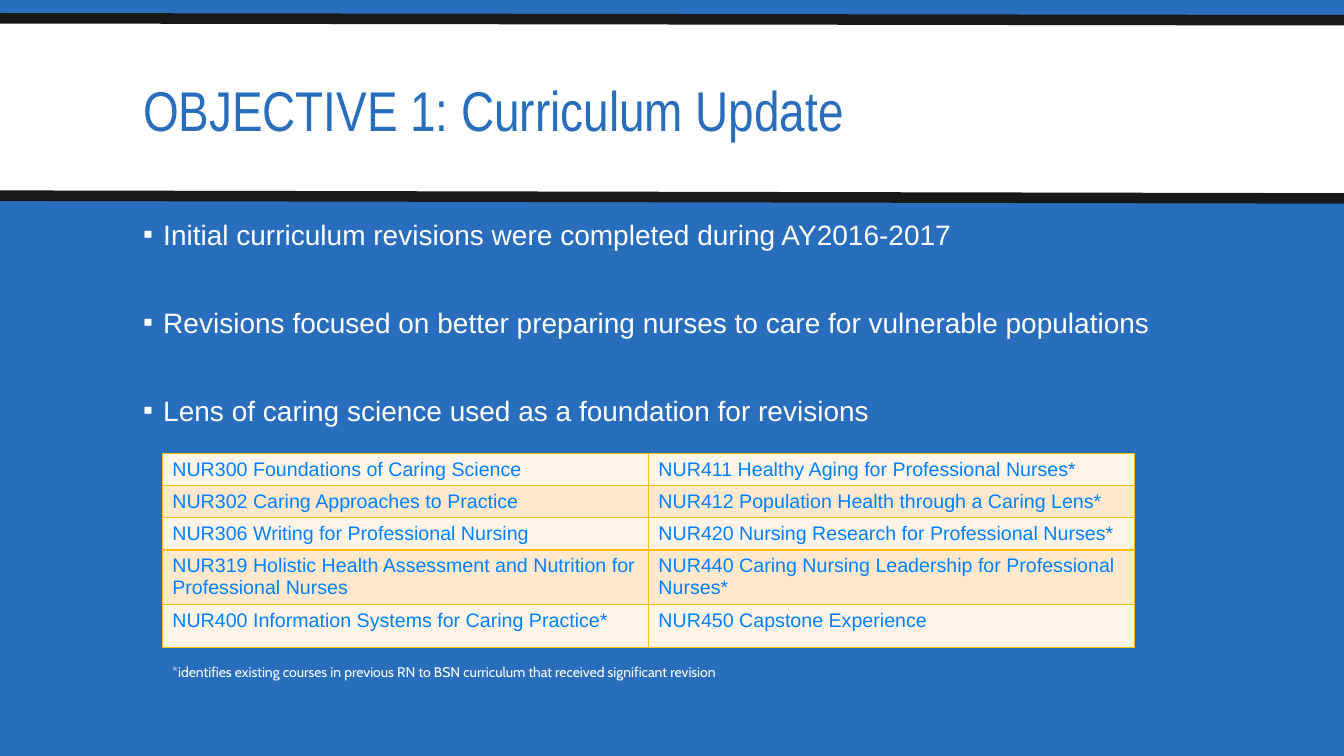
from lxml import etree
from pptx import Presentation
from pptx.dml.color import RGBColor
from pptx.enum.shapes import MSO_CONNECTOR, MSO_SHAPE
from pptx.enum.text import MSO_ANCHOR, MSO_AUTO_SIZE, PP_ALIGN
from pptx.oxml.ns import qn
from pptx.util import Cm, Pt

RECTANGLE = MSO_SHAPE.RECTANGLE
STRAIGHT = MSO_CONNECTOR.STRAIGHT
MIDDLE, TOP = MSO_ANCHOR.MIDDLE, MSO_ANCHOR.TOP
LEFT = PP_ALIGN.LEFT
NO_AUTOFIT, GROW = MSO_AUTO_SIZE.NONE, MSO_AUTO_SIZE.SHAPE_TO_FIT_TEXT

SLIDE_WIDTH, SLIDE_HEIGHT = 33.87, 19.05
BLUE, WHITE, BLACK = "296EBC", "FFFFFF", "181818"
COURSE_BLUE, GOLD = "0080FF", "FFC000"
ROW_FILLS = ("FFF4E7", "FFE8CC")
ROW_HEIGHTS = (0.8, 0.8, 0.8, 1.38, 1.07)

GOALS = (
    "Initial curriculum revisions were completed during AY2016-2017",
    "Revisions focused on better preparing nurses to care for vulnerable populations",
    "Lens of caring science used as a foundation for revisions",
)
COURSES = (
    ("NUR300 Foundations of Caring Science",
     "NUR411 Healthy Aging for Professional Nurses*"),
    ("NUR302 Caring Approaches to Practice",
     "NUR412 Population Health through a Caring Lens*"),
    ("NUR306 Writing for Professional Nursing",
     "NUR420 Nursing Research for Professional Nurses*"),
    ("NUR319 Holistic Health Assessment and Nutrition for Professional Nurses",
     "NUR440 Caring Nursing Leadership for Professional Nurses*"),
    ("NUR400 Information Systems for Caring Practice*",
     "NUR450 Capstone Experience"),
)
FOOTNOTE = ("*identifies existing courses in previous RN to BSN curriculum "
            "that received significant revision")


def color(hex_value):
    return RGBColor.from_string(hex_value)


def place(shape, left, top, width, height):
    shape.left, shape.top = Cm(left), Cm(top)
    shape.width, shape.height = Cm(width), Cm(height)


def set_font(paragraph, name, size, hex_value):
    font = paragraph.font
    font.name, font.size = name, Pt(size)
    font.color.rgb = color(hex_value)


def add_band(slide, top, height):
    band = slide.shapes.add_shape(RECTANGLE, 0, Cm(top), Cm(SLIDE_WIDTH), Cm(height))
    band.shadow.inherit = False
    band.fill.solid()
    band.fill.fore_color.rgb = color(WHITE)
    band.line.fill.background()
    # Send the band behind the placeholders
    band.element.getparent().insert(2, band.element)


def add_rule(slide, start_top, end_top):
    rule = slide.shapes.add_connector(
        STRAIGHT, 0, Cm(start_top), Cm(SLIDE_WIDTH), Cm(end_top))
    rule.line.color.rgb = color(BLACK)
    rule.line.width = Pt(7.5)
    etree.SubElement(rule.element.spPr, qn("a:effectLst"))


def fill_title(title, text):
    place(title, 3.35, 0.79, 27.18, 4.19)
    frame = title.text_frame
    frame.text = text
    frame.auto_size = NO_AUTOFIT
    frame.vertical_anchor = MIDDLE
    paragraph = frame.paragraphs[0]
    paragraph.alignment = LEFT
    paragraph.line_spacing = 0.85
    set_font(paragraph, "Arial Narrow", 40, BLUE)


def add_bullet(paragraph):
    properties = paragraph._p.get_or_add_pPr()
    properties.set("marL", str(Cm(0.51)))
    properties.set("indent", str(Cm(-0.51)))
    bullet_color = etree.SubElement(properties, qn("a:buClr"))
    etree.SubElement(bullet_color, qn("a:srgbClr"), val=WHITE)
    etree.SubElement(properties, qn("a:buFont"), typeface="Arial")
    etree.SubElement(properties, qn("a:buChar"), char="▪")


def fill_body(body, items):
    place(body, 3.35, 5.59, 27.18, 11.68)
    frame = body.text_frame
    frame.text = "\n".join(items)
    frame.auto_size = NO_AUTOFIT
    frame.vertical_anchor = TOP
    for index, paragraph in enumerate(frame.paragraphs):
        add_bullet(paragraph)
        paragraph.line_spacing = 0.7
        paragraph.space_before = Pt(44 if index else 0)
        paragraph.space_after = Pt(2)
        set_font(paragraph, "Arial", 20, WHITE)


def add_borders(cell):
    properties = cell._tc.get_or_add_tcPr()
    for side in ("lnL", "lnR", "lnT", "lnB"):
        border = etree.SubElement(properties, qn(f"a:{side}"), w=str(Pt(1)))
        fill = etree.SubElement(border, qn("a:solidFill"))
        etree.SubElement(fill, qn("a:srgbClr"), val=GOLD)


def add_course_table(slide, courses):
    table = slide.shapes.add_table(
        len(courses), 2, Cm(4.09), Cm(11.43), Cm(24.5), Cm(sum(ROW_HEIGHTS))).table
    table.first_row = table.horz_banding = False
    for row_index, names in enumerate(courses):
        table.rows[row_index].height = Cm(ROW_HEIGHTS[row_index])
        for column_index, name in enumerate(names):
            cell = table.cell(row_index, column_index)
            cell.text = name
            add_borders(cell)
            cell.fill.solid()
            cell.fill.fore_color.rgb = color(ROW_FILLS[row_index % 2])
            set_font(cell.text_frame.paragraphs[0], "Arial", 14, COURSE_BLUE)


def add_footnote(slide, text):
    box = slide.shapes.add_textbox(Cm(4.09), Cm(16.59), Cm(14.25), Cm(0.69))
    frame = box.text_frame
    frame.text = text
    frame.word_wrap = False
    frame.auto_size = GROW
    set_font(frame.paragraphs[0], "Cabin", 10, WHITE)


def main():
    presentation = Presentation()
    presentation.slide_width = Cm(SLIDE_WIDTH)
    presentation.slide_height = Cm(SLIDE_HEIGHT)
    slide = presentation.slides.add_slide(presentation.slide_layouts[1])
    slide.background.fill.solid()
    slide.background.fill.fore_color.rgb = color(BLUE)

    # Title band
    add_band(slide, 0.48, 4.57)
    fill_title(slide.shapes.title, "OBJECTIVE 1: Curriculum Update")

    # Goals
    fill_body(slide.placeholders[1], GOALS)

    # Rules along the band
    add_rule(slide, 4.93, 5)
    add_rule(slide, 0.46, 0.51)

    # Courses and footnote
    add_course_table(slide, COURSES)
    add_footnote(slide, FOOTNOTE)

    presentation.save("out.pptx")


if __name__ == "__main__":
    main()
